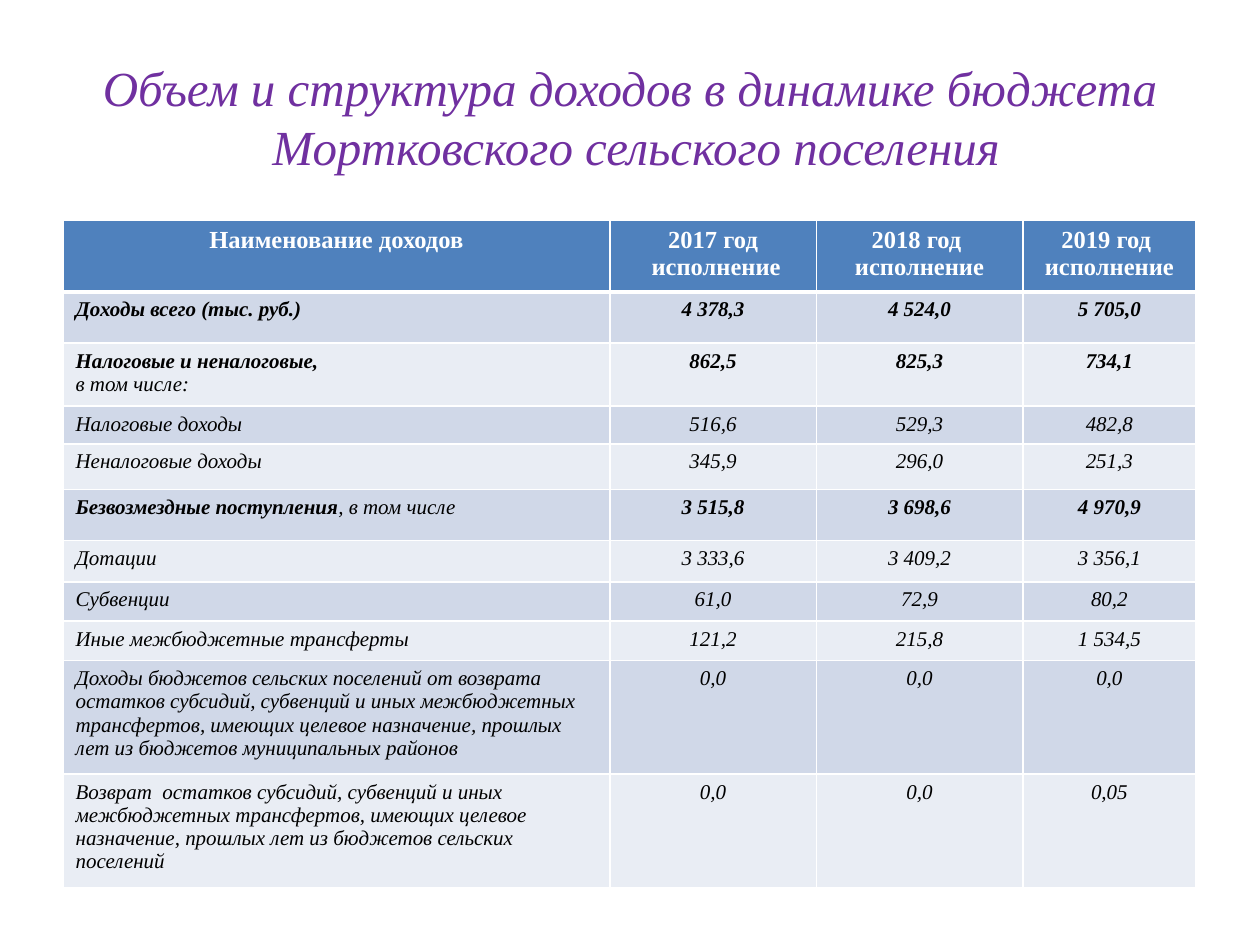
import pptx
import pptx.dml.color
import pptx.enum.text
import pptx.oxml
import pptx.oxml.ns
import pptx.util

Pt = pptx.util.Pt
RGBColor = pptx.dml.color.RGBColor
CENTER = pptx.enum.text.PP_ALIGN.CENTER
LEFT = pptx.enum.text.PP_ALIGN.LEFT

FONT = "Times New Roman"
PURPLE = RGBColor(0x70, 0x30, 0xA0)
BLUE = RGBColor(0x4F, 0x81, 0xBD)
BANDS = [RGBColor(0xD0, 0xD8, 0xE8), RGBColor(0xE9, 0xED, 0xF4)]
WHITE = RGBColor(0xFF, 0xFF, 0xFF)
BLACK = RGBColor(0, 0, 0)

HEADER = ["Наименование доходов", "2017 год\n исполнение",
          "2018 год \nисполнение", "2019 год \nисполнение"]
# Bold part of the name, plain part of the name, yearly values, row height
INCOMES = [
    ("Доходы всего (тыс. руб.)", "", ["4 378,3", "4 524,0", "5 705,0"], 29.2),
    ("Налоговые и неналоговые,", "\nв том числе:", ["862,5", "825,3", "734,1"], 34),
    ("", "Налоговые доходы", ["516,6", "529,3", "482,8"], 21),
    ("", "Неналоговые доходы", ["345,9", "296,0", "251,3"], 26),
    ("Безвозмездные поступления", ", в том числе", ["3 515,8", "3 698,6", "4 970,9"], 29.2),
    ("", "Дотации", ["3 333,6", "3 409,2", "3 356,1"], 23.6),
    ("", "Субвенции", ["61,0", "72,9", "80,2"], 22.4),
    ("", "Иные межбюджетные трансферты", ["121,2", "215,8", "1 534,5"], 22.6),
    ("", "Доходы бюджетов сельских поселений от возврата остатков субсидий, "
         "субвенций и иных межбюджетных трансфертов, имеющих целевое назначение, "
         "прошлых лет из бюджетов муниципальных районов", ["0,0", "0,0", "0,0"], 60.4),
    ("", "Возврат  остатков субсидий, субвенций и иных межбюджетных трансфертов, "
         "имеющих целевое назначение, прошлых лет из бюджетов сельских поселений",
     ["0,0", "0,0", "0,05"], 60.4),
]
COLUMN_WIDTHS = [312.5, 118, 118, 99]
HEADER_HEIGHT = 37.6


def style_run(run, size, color, bold=False, italic=True):
    run.font.name = FONT
    run.font.size = Pt(size)
    run.font.color.rgb = color
    run.font.bold = bold
    run.font.italic = italic


def style_cell(cell, fill, bottom_width, alignment):
    """Give the cell white borders, a fill and one alignment for all its text."""
    properties = cell._tc.get_or_add_tcPr()
    for side, width in (("L", 1), ("R", 1), ("T", 1), ("B", bottom_width)):
        properties.append(pptx.oxml.parse_xml(
            f'<a:ln{side} {pptx.oxml.ns.nsdecls("a")} w="{Pt(width)}">'
            f'<a:solidFill><a:srgbClr val="{WHITE}"/></a:solidFill></a:ln{side}>'))
    cell.fill.solid()
    cell.fill.fore_color.rgb = fill
    for paragraph in cell.text_frame.paragraphs:
        paragraph.alignment = alignment


presentation = pptx.Presentation()
presentation.slide_width = Pt(720)
presentation.slide_height = Pt(540)
slide = presentation.slides.add_slide(presentation.slide_layouts[6])

title = slide.shapes.add_textbox(Pt(36), Pt(21.6), Pt(648), Pt(90)).text_frame
title.word_wrap = True
title.vertical_anchor = pptx.enum.text.MSO_ANCHOR.MIDDLE
heading = title.paragraphs[0]
heading.text = "Объем и структура доходов в динамике бюджета\v Мортковского сельского поселения"
heading.alignment = CENTER
heading.line_spacing = Pt(33.7)
for run in heading.runs:
    style_run(run, 28, PURPLE)

row_heights = [HEADER_HEIGHT] + [income[3] for income in INCOMES]
budget = slide.shapes.add_table(
    len(row_heights), len(COLUMN_WIDTHS),
    Pt(36), Pt(126), Pt(sum(COLUMN_WIDTHS)), Pt(sum(row_heights))).table
for column, width in zip(budget.columns, COLUMN_WIDTHS):
    column.width = Pt(width)
for row, height in zip(budget.rows, row_heights):
    row.height = Pt(height)

for column, label in enumerate(HEADER):
    cell = budget.cell(0, column)
    cell.text_frame.text = label
    style_cell(cell, BLUE, 3, CENTER)
    for paragraph in cell.text_frame.paragraphs:
        for run in paragraph.runs:
            style_run(run, 14, WHITE, bold=True, italic=False)

for row, (bold_name, plain_name, values, height) in enumerate(INCOMES, start=1):
    band = BANDS[(row - 1) % 2]
    name_cell = budget.cell(row, 0)
    name_frame = name_cell.text_frame
    name_frame.text = bold_name
    for run in name_frame.paragraphs[0].runs:
        style_run(run, 12, BLACK, bold=True)
    if plain_name:
        paragraph = name_frame.paragraphs[0]
        if plain_name.startswith("\n"):
            paragraph = name_frame.add_paragraph()
        run = paragraph.add_run()
        run.text = plain_name.strip("\n")
        style_run(run, 12, BLACK)
    style_cell(name_cell, band, 1, LEFT)

    for column, value in enumerate(values, start=1):
        cell = budget.cell(row, column)
        cell.text_frame.text = value
        style_cell(cell, band, 1, CENTER)
        style_run(cell.text_frame.paragraphs[0].runs[0], 12, BLACK, bold=bool(bold_name))

presentation.save("out.pptx")
